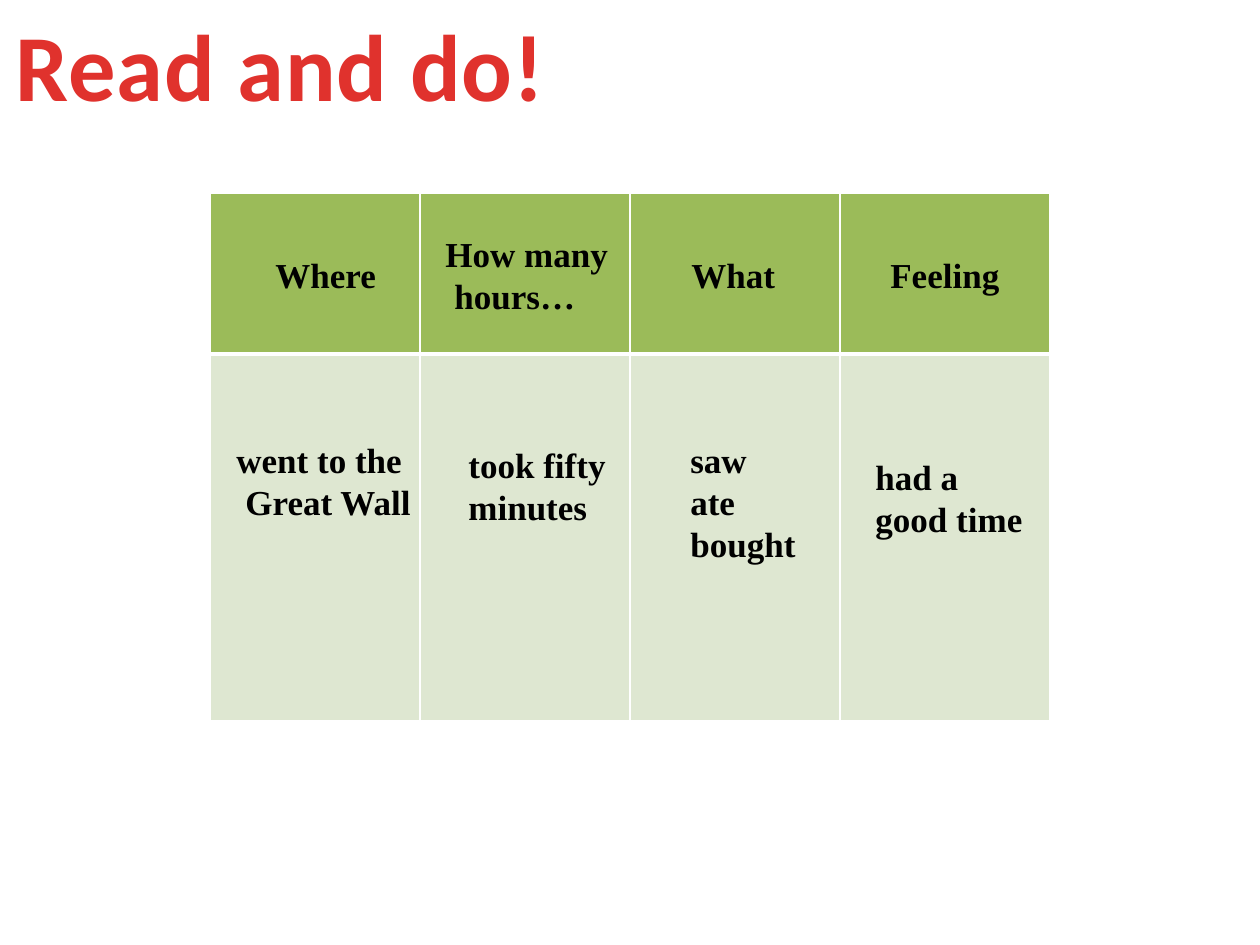
"""Build the "Read and do!" slide with a four-column reading table."""
from lxml.etree import SubElement
from pptx import Presentation
from pptx.dml.color import RGBColor
from pptx.enum.text import MSO_ANCHOR, MSO_AUTO_SIZE, PP_ALIGN
from pptx.oxml.ns import qn
from pptx.util import Emu, Pt

COLORS = {
    "title": "E0322D",
    "text": "000000",
    "header": "9BBB59",
    "body": "DEE7D1",
    "border": "FFFFFF",
}


def px(n):
    return Emu(round(n * 914400 / 126))


def rgb(name):
    return RGBColor.from_string(COLORS[name])


class SlideBuilder:
    def __init__(self, slide):
        self.s = slide
        self.font = "Times New Roman"
        self.size = 20

    def add_run(self, p, text, font, size, color):
        r = p.add_run()
        r.text = text
        r.font.name = font
        r.font.size = Pt(size)
        r.font.bold = True
        r.font.color.rgb = rgb(color)
        return r

    def title(self, text, x, y, w, h):
        sp = self.s.shapes.title
        sp.left, sp.top, sp.width, sp.height = map(px, (x, y, w, h))
        tf = sp.text_frame
        tf.word_wrap = False
        tf.auto_size = MSO_AUTO_SIZE.SHAPE_TO_FIT_TEXT
        tf.vertical_anchor = MSO_ANCHOR.TOP
        p = tf.paragraphs[0]
        p.alignment = PP_ALIGN.CENTER
        r = self.add_run(p, text, "Calibri", 54, "title")
        r.font._element.set("spc", "50")

    def label(self, lines, x, y, w, h):
        tf = self.s.shapes.add_textbox(*map(px, (x, y, w, h))).text_frame
        tf.word_wrap = False
        tf.auto_size = MSO_AUTO_SIZE.SHAPE_TO_FIT_TEXT
        for i, (text, indent) in enumerate(lines):
            p = tf.add_paragraph() if i else tf.paragraphs[0]
            p.alignment = PP_ALIGN.LEFT
            p._p.get_or_add_pPr().set("marL", str(px(indent)))
            self.add_run(p, text, self.font, self.size, "text")

    def borders(self, cell, top, bottom):
        tc_pr = cell._tc.get_or_add_tcPr()
        for side, width in (("L", 1), ("R", 1), ("T", top), ("B", bottom)):
            ln = SubElement(tc_pr, qn(f"a:ln{side}"), w=str(Pt(width)))
            fill = SubElement(ln, qn("a:solidFill"))
            SubElement(fill, qn("a:srgbClr"), val=COLORS["border"])

    def table(self, x, y, col_width, cols, rows):
        heights = [row[0] for row in rows]
        table = self.s.shapes.add_table(
            len(rows), cols, px(x), px(y), px(col_width * cols), px(sum(heights))
        ).table
        for col in table.columns:
            col.width = px(col_width)
        for i, (height, color, top, bottom) in enumerate(rows):
            table.rows[i].height = px(height)
            for cell in table.rows[i].cells:
                self.borders(cell, top, bottom)
                cell.fill.solid()
                cell.fill.fore_color.rgb = rgb(color)


def main():
    prs = Presentation()
    prs.slide_width, prs.slide_height = px(1260), px(945)
    b = SlideBuilder(prs.slides.add_slide(prs.slide_layouts[5]))
    b.title("Read and do!", 0, 1, 561, 127)
    b.table(210, 193, 210, 4, [(161, "header", 1, 3), (367, "body", 3, 1)])

    labels = [
        ([("Where", 0)], 263, 247, 127, 55),
        ([("How many", 0), ("hours…", 9)], 433, 226, 198, 97),
        ([("What", 0)], 679, 247, 118, 55),
        ([("Feeling", 0)], 878, 247, 135, 55),
        ([("went to the", 9), ("Great Wall", 18)], 215, 432, 210, 97),
        ([("took fifty", 9), ("minutes", 9)], 447, 437, 173, 97),
        ([("saw", 9), ("ate", 9), ("bought", 9)], 669, 432, 140, 140),
        ([("had a", 9), ("good time", 9)], 854, 449, 183, 97),
    ]
    for lines, *box in labels:
        b.label(lines, *box)
    prs.save("out.pptx")


if __name__ == "__main__":
    main()
